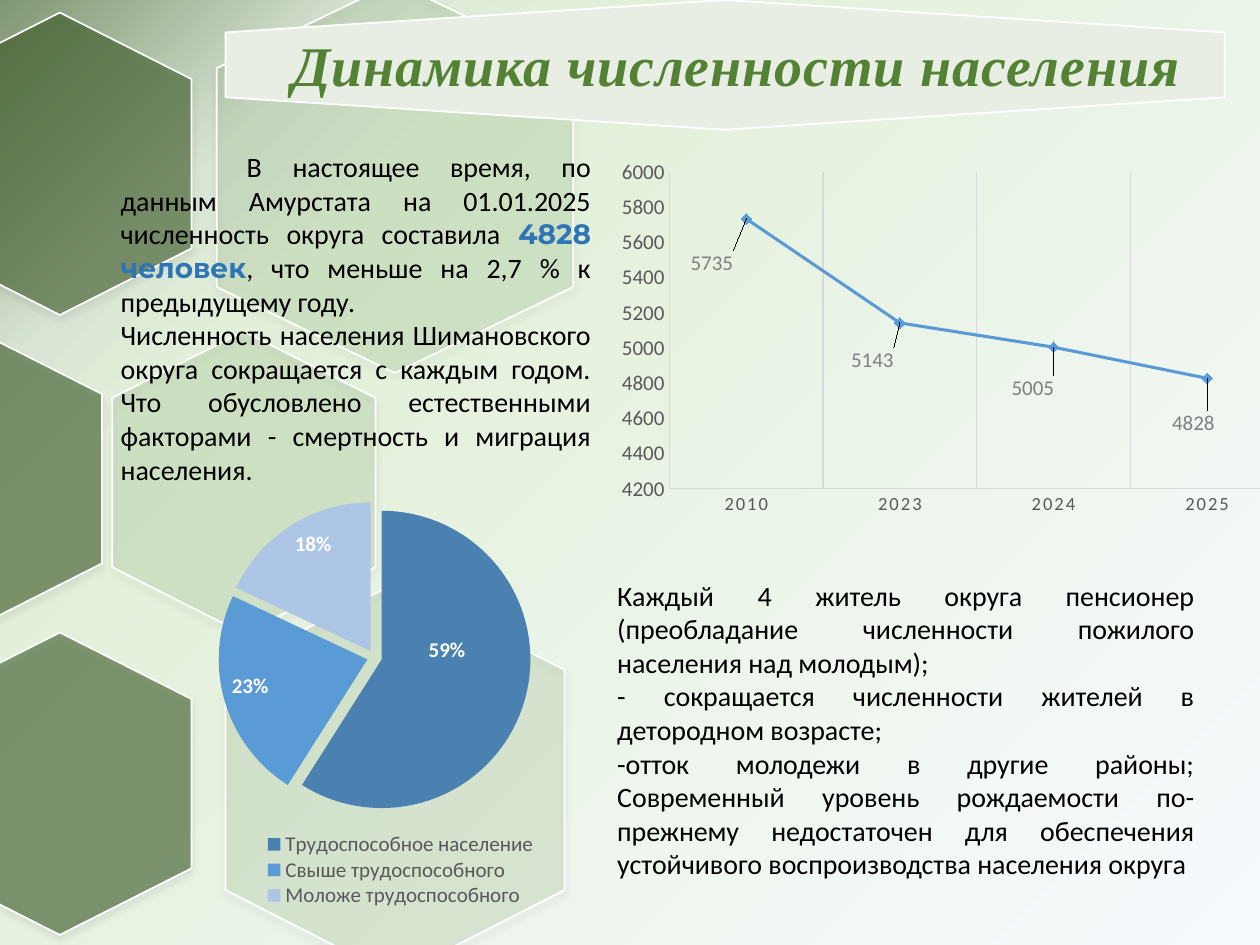
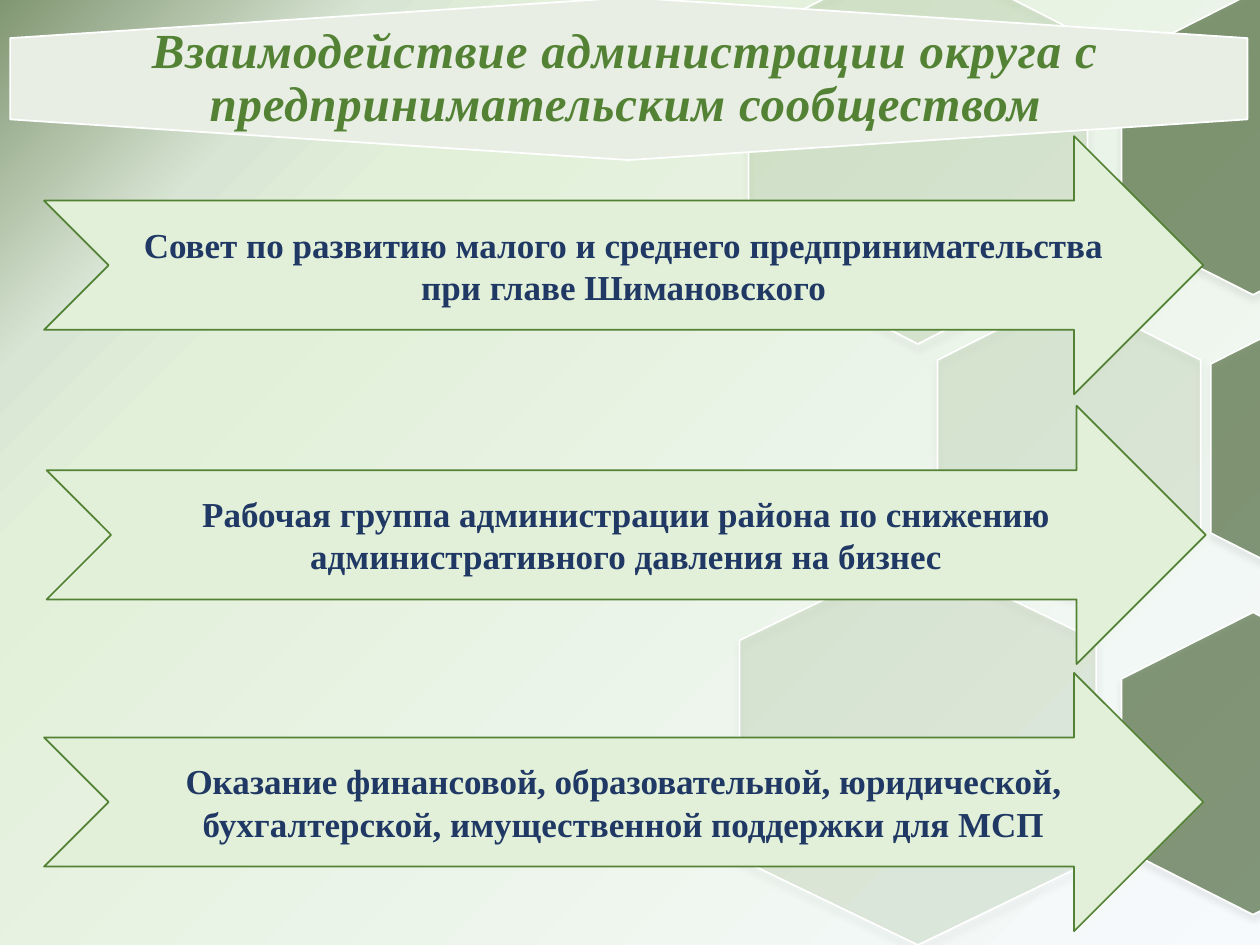
from pptx import Presentation, oxml, util as u
from pptx.chart import data
from pptx.dml import color
from pptx.enum import chart as ch, shapes as sh, text as tx
from pptx.oxml import ns

# Shared look
GREEN, DARK, PALE, BAND = "548235", "385723", "E2F0D9", "E8EEE4"
WHITE, BLACK, NAVY, BLUE = "FFFFFF", "000000", "203864", "5B9BD5"
GRAY, RULE = "595959", "D9D9D9"
SANS, SERIF = "Calibri", "Times New Roman"
STOPS = [(0, "F7FAFD"), (74, PALE), (83, "D8E5D4"), (100, "819672")]

# Honeycomb cells: left, top, width, height, colour, opacity in percent
CELLS = [
    (89, -0.6, 20.9, 24, DARK, 58),
    (59.4, -3.9, 26.9, 31.2, GREEN, 13),
    (74.4, 23.3, 20.9, 24, GREEN, 13),
    (96.1, 23.6, 20.9, 24, DARK, 58),
    (89, 48.6, 20.9, 24, DARK, 58),
    (58.7, 44, 28.3, 31, GREEN, 13),
]
# The honeycomb turned half round moves each cell to this sum minus its far edge
TURN = (104.2, 73.6)


def grid(*cells):
    """Lengths on a grid of 100 columns by 75 rows."""
    return [u.Inches(c / 10) for c in cells]


def rgb(code):
    return color.RGBColor.from_string(code)


def xml(tag, rest):
    """Build an element from its tag, with the rest of its source."""
    spaces = ns.nsdecls("a", "p", "c")
    return oxml.parse_xml(f"<{tag} {spaces}{rest}")


def style(font, name, size, code, bold=False):
    font.name, font.size, font.bold = name, u.Pt(size), bold
    font.color.rgb = rgb(code)


def paint(shape, fill, line):
    shape.shadow.inherit = False
    shape.fill.solid()
    shape.fill.fore_color.rgb = rgb(fill)
    shape.line.color.rgb = rgb(line)
    shape.line.width = u.Pt(1)


def write(frame, paras, align):
    """Each paragraph is a list of runs: text, font, size, colour, bold."""
    frame.word_wrap = True
    for i, runs in enumerate(paras):
        para = frame.paragraphs[0] if i == 0 else frame.add_paragraph()
        para.alignment = align
        for words, *look in runs:
            run = para.add_run()
            run.text = words
            style(run.font, *look)


def back(slide):
    stops = "".join(f'<a:gs pos="{p * 1000}"><a:srgbClr val="{c}"/></a:gs>' for p, c in STOPS)
    slide._element.cSld.insert(0, xml("p:bg", (
        f"><p:bgPr><a:gradFill><a:gsLst>{stops}</a:gsLst>"
        '<a:path path="circle"><a:fillToRect l="100000" t="100000"/></a:path>'
        '<a:tileRect r="-100000" b="-100000"/></a:gradFill><a:effectLst/></p:bgPr></p:bg>')))


def cell(slide, x, y, w, h, code, alpha):
    cut = 0.22 * h
    dots = [(x + w / 2, y), (x + w, y + cut), (x + w, y + h - cut),
            (x + w / 2, y + h), (x, y + h - cut), (x, y + cut)]
    dots = [grid(*d) for d in dots]
    pen = slide.shapes.build_freeform(*dots[0])
    pen.add_line_segments(dots[1:], close=True)
    shape = pen.convert_to_shape()
    paint(shape, code, WHITE)
    tint = next(shape._element.spPr.iter(ns.qn("a:srgbClr")))
    tint.append(xml("a:alpha", f' val="{alpha * 1000}"/>'))
    glow = shape._element.spPr.find(ns.qn("a:effectLst"))
    glow.append(xml("a:outerShdw", (
        ' blurRad="50800" dist="38100" dir="5400000" rotWithShape="0">'
        '<a:srgbClr val="000000"><a:alpha val="10000"/></a:srgbClr></a:outerShdw>')))


def comb(slide, order, turned=False):
    for i in order:
        x, y, w, h, *look = CELLS[i]
        if turned:
            x, y = TURN[0] - x - w, TURN[1] - y - h
        cell(slide, x, y, w, h, *look)


def title(slide, words, band, box, size):
    """A hexagon lying on its side, with the heading over it."""
    x, y, w, h = band
    turn = grid(x + (w - h) / 2, y - (w - h) / 2, h, w)
    shape = slide.shapes.add_shape(sh.MSO_SHAPE.HEXAGON, *turn)
    shape.rotation = 90
    shape.adjustments[0] = 0.25
    paint(shape, BAND, WHITE)
    frame = slide.shapes.add_textbox(*grid(*box)).text_frame
    frame.margin_left = frame.margin_right = frame.margin_top = frame.margin_bottom = 0
    frame.vertical_anchor = tx.MSO_ANCHOR.MIDDLE
    write(frame, [[(words, SERIF, size, GREEN, True)]], tx.PP_ALIGN.CENTER)
    para = frame.paragraphs[0]
    para.line_spacing = 0.9
    font = para.runs[0].font
    font.italic = True
    props = para.runs[0]._r.rPr
    props.set("spc", "50")
    props.insert(0, xml("a:ln", (
        f' w="9525"><a:solidFill><a:srgbClr val="{GREEN}"/></a:solidFill></a:ln>')))
    props.insert(2, xml("a:effectLst", (
        '><a:outerShdw blurRad="38100" dist="25400" dir="2700000">'
        f'<a:srgbClr val="{BLUE}"><a:alpha val="50000"/></a:srgbClr></a:outerShdw></a:effectLst>')))


def note(slide, box, paras):
    frame = slide.shapes.add_textbox(*grid(*box)).text_frame
    write(frame, paras, tx.PP_ALIGN.JUSTIFY)
    return frame


def arrow(slide, x, y, lines):
    shape = slide.shapes.add_shape(sh.MSO_SHAPE.NOTCHED_RIGHT_ARROW, *grid(x, y, 92, 20.5))
    paint(shape, PALE, GREEN)
    shape.text_frame.vertical_anchor = tx.MSO_ANCHOR.MIDDLE
    write(shape.text_frame, [[(t, SERIF, 20, NAVY, True)] for t in lines], tx.PP_ALIGN.CENTER)


# Charts
def place(x, y, w=None, h=None, inner=False):
    """A manual layout, in shares of the chart."""
    tags = [("layoutTarget", "inner")] if inner else []
    if w:
        tags += [("xMode", "edge"), ("yMode", "edge")]
    tags += [("x", x), ("y", y)]
    if w:
        tags += [("w", w), ("h", h)]
    body = "".join(f'<c:{t} val="{v}"/>' for t, v in tags)
    return xml("c:layout", f"><c:manualLayout>{body}</c:manualLayout></c:layout>")


def graph(slide, kind, box, cats, vals, area):
    info = data.CategoryChartData()
    info.categories = cats
    info.add_series("Series 1", vals)
    chart = slide.shapes.add_chart(kind, *grid(*box), info).chart
    chart.has_title = chart.has_legend = False
    style(chart.font, SANS, 10, BLACK)
    plot = chart.element.chart.plotArea
    for old in plot.findall(ns.qn("c:layout")):
        plot.remove(old)
    plot.insert(0, place(*area, inner=True))
    clear = "><a:noFill/><a:ln><a:noFill/></a:ln></c:spPr>"
    plot.append(xml("c:spPr", clear))
    chart.element.chart.addnext(xml("c:spPr", clear))
    return chart


def nudge(chart, moves, spot, look, share=False):
    """Move the labels of the first points by shares of the chart."""
    points = chart.plots[0].series[0].points
    for i, _ in enumerate(moves):
        label = points[i].data_label
        style(label.font, *look)
        label.position = spot
    for node, move in zip(chart.element.iter(ns.qn("c:dLbl")), moves):
        node.insert(1, place(*move))
        if share:
            node.find(ns.qn("c:showVal")).set("val", "0")
            node.find(ns.qn("c:showPercent")).set("val", "1")


def trend(slide):
    chart = graph(slide, ch.XL_CHART_TYPE.LINE_MARKERS, (48.2, 12.2, 54.8, 29.4),
                  ["2010", "2023", "2024", "2025"], [5735, 5143, 5005, 4828],
                  (0.09, 0.05, 0.89, 0.855))
    cat, val = chart.category_axis, chart.value_axis
    for axis, size in ((cat, 10.6), (val, 12)):
        axis.major_tick_mark = axis.minor_tick_mark = ch.XL_TICK_MARK.NONE
        style(axis.tick_labels.font, SANS, size, GRAY)
        axis.format.line.color.rgb = rgb(RULE)
        axis.format.line.width = u.Pt(0.75)
    for props in cat._element.iter(ns.qn("a:defRPr")):
        props.set("spc", "120")
    cat.has_major_gridlines, val.has_major_gridlines = True, False
    cat.major_gridlines.format.line.color.rgb = rgb(RULE)
    cat.major_gridlines.format.line.width = u.Pt(0.75)
    val.minimum_scale, val.maximum_scale, val.major_unit = 4200, 6000, 200
    chart.plots[0].vary_by_categories = False
    line = chart.plots[0].series[0]
    line.smooth = False
    line.format.line.color.rgb = rgb(BLUE)
    line.format.line.width = u.Pt(1.75)
    line.marker.style, line.marker.size = ch.XL_MARKER_STYLE.DIAMOND, 6
    line.marker.format.fill.solid()
    line.marker.format.fill.fore_color.rgb = rgb(BLUE)
    line.marker.format.line.color.rgb = rgb(BLUE)
    nudge(chart, [(-0.05, 0.12), (-0.04, 0.1), (-0.03, 0.11), (-0.02, 0.12)],
          ch.XL_LABEL_POSITION.CENTER, (SANS, 12, "808080"))


def ages(slide):
    chart = graph(slide, ch.XL_CHART_TYPE.PIE, (13.8, 36.2, 59, 35.9),
                  ["Трудоспособное население", "Свыше трудоспособного", "Моложе трудоспособного"],
                  [59, 23, 18], (0.06, 0.09, 0.42, 0.71))
    chart.plots[0].vary_by_categories = True
    pie = chart.plots[0].series[0]
    for i, code in enumerate(["4B81B1", BLUE, "ADC6E5"]):
        fill = pie.points[i].format.fill
        fill.solid()
        fill.fore_color.rgb = rgb(code)
    pie._element.find(ns.qn("c:dPt")).addprevious(xml("c:explosion", ' val="5"/>'))
    spot, look = ch.XL_LABEL_POSITION.INSIDE_END, (SANS, 12, WHITE, True)
    labels = pie.data_labels
    labels.show_percentage, labels.show_value = True, False
    labels.number_format, labels.number_format_is_linked = "0%", False
    labels.position = spot
    style(labels.font, *look)
    nudge(chart, [(-0.07, -0.08)], spot, look, share=True)
    chart.has_legend = True
    key = chart.legend
    key.position, key.include_in_layout = ch.XL_LEGEND_POSITION.TOP, False
    style(key.font, SANS, 12, GRAY)
    node = key._element
    for old in node.findall(ns.qn("c:layout")):
        node.remove(old)
    node.find(ns.qn("c:legendPos")).addnext(place(0.11, 0.83, 0.39, 0.17))


# Slides
def people(slide):
    back(slide)
    comb(slide, range(6), turned=True)
    title(slide, "Динамика численности населения", (17.9, 0, 79.3, 10.3), (18.3, 1.9, 80.3, 7), 32)
    trend(slide)
    body = (SANS, 16, BLACK)
    frame = note(slide, (8.6, 11.4, 39.3, 28.3), [
        [("В настоящее время, по данным Амурстата на 01.01.2025 численность округа составила ", *body),
         ("4828 человек", "Montserrat", 16, "2E75B6", True),
         (", что меньше на 2,7 % к предыдущему году.", *body)],
        [("Численность населения Шимановского округа сокращается с каждым годом. "
          "Что обусловлено естественными факторами - смертность и миграция населения.", *body)]])
    frame.paragraphs[0]._p.get_or_add_pPr().set("indent", str(u.Inches(1)))
    note(slide, (48, 45.4, 47.8, 28.3), [[(t, *body)] for t in (
        "Каждый 4 житель округа пенсионер (преобладание численности пожилого населения над молодым);",
        "- сокращается численности жителей в детородном возрасте;",
        "-отток молодежи в другие районы; Современный уровень рождаемости по-прежнему "
        "недостаточен для обеспечения устойчивого воспроизводства населения округа")])
    ages(slide)


def trade(slide):
    back(slide)
    comb(slide, range(6))
    title(slide, "Взаимодействие администрации округа с предпринимательским сообществом",
          (0.8, -0.2, 98.2, 12.9), (-0.1, 1.3, 99.5, 9.9), 28)
    arrow(slide, 3.5, 10.8, ["Совет по развитию малого и среднего предпринимательства",
                             "при главе Шимановского"])
    arrow(slide, 3.7, 32.2, ["Рабочая группа администрации района по снижению",
                             "административного давления на бизнес"])
    arrow(slide, 3.5, 53.4, ["Оказание финансовой, образовательной, юридической, "
                             "бухгалтерской, имущественной поддержки для МСП"])


def main():
    deck = Presentation()
    deck.slide_width, deck.slide_height = grid(100, 75)
    for fill in (people, trade):
        fill(deck.slides.add_slide(deck.slide_layouts[6]))
    deck.save("out.pptx")


if __name__ == "__main__":
    main()
